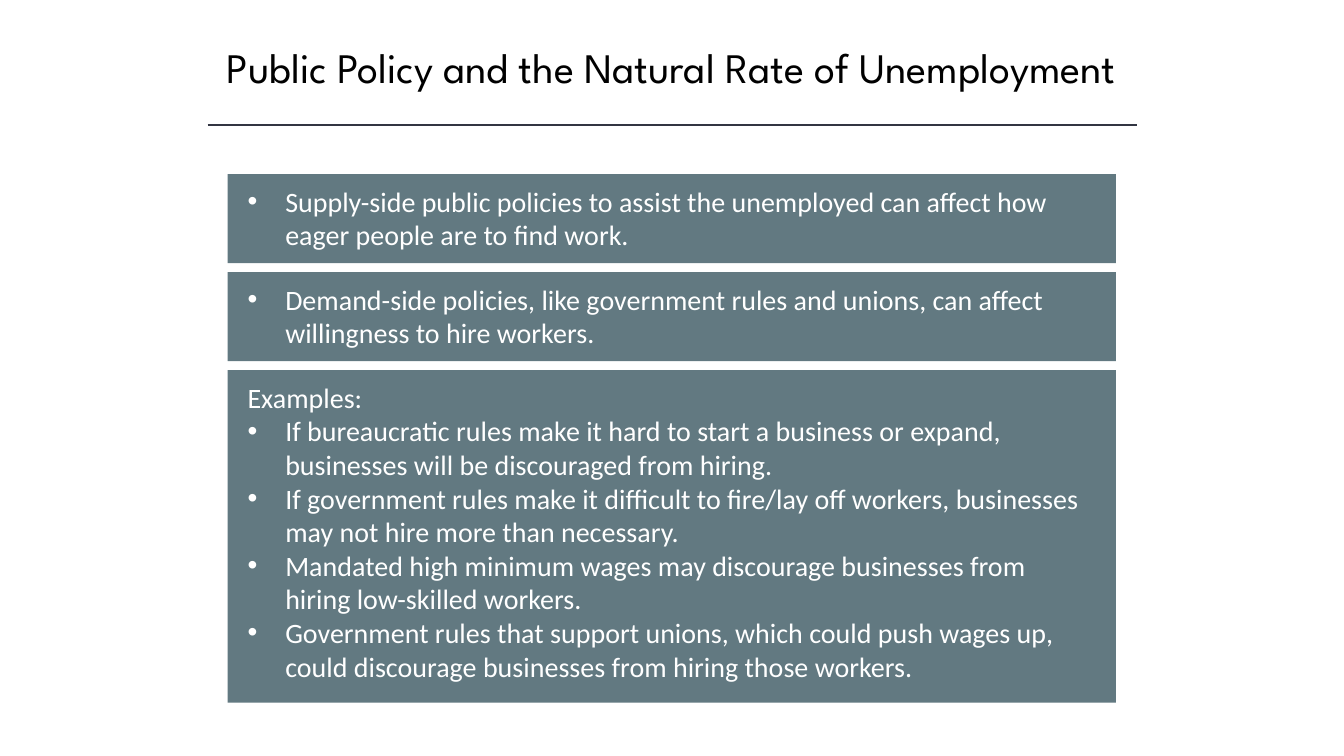
from lxml.etree import SubElement
from pptx import Presentation
from pptx.dml.color import RGBColor
from pptx.enum.shapes import MSO_CONNECTOR, MSO_SHAPE
from pptx.enum.text import MSO_ANCHOR, PP_ALIGN
from pptx.oxml.ns import qn
from pptx.util import Cm, Pt

BLACK = RGBColor(0x00, 0x00, 0x00)
WHITE = RGBColor(0xFF, 0xFF, 0xFF)
SLATE = RGBColor(0x62, 0x79, 0x81)
NAVY = RGBColor(0x32, 0x35, 0x42)

CARD_LEFT, CARD_TOP, CARD_WIDTH, CARD_GAP = 5.74, 4.39, 22.38, 0.23
CARDS = [
    (2.24, None, [
        "Supply-side public policies to assist the unemployed can affect how eager people are to find work.",
    ]),
    (2.24, None, [
        "Demand-side policies, like government rules and unions, can affect willingness to hire workers.",
    ]),
    (8.38, "Examples:", [
        "If bureaucratic rules make it hard to start a business or expand, "
        "businesses will be discouraged from hiring.",
        "If government rules make it difficult to fire/lay off workers, "
        "businesses may not hire more than necessary.",
        "Mandated high minimum wages may discourage businesses from hiring low-skilled workers.",
        "Government rules that support unions, which could push wages up, "
        "could discourage businesses from hiring those workers.",
    ]),
]


def write_paragraph(para, text, *, font, size, color, align=PP_ALIGN.LEFT, bullet=False):
    """Fill a paragraph with formatted text, optionally with a hanging bullet."""
    para.alignment = align
    if bullet:
        properties = para._p.get_or_add_pPr()
        properties.set("marL", str(Cm(0.95)))
        properties.set("indent", str(-Cm(0.95)))
        SubElement(properties, qn("a:buFont")).set("typeface", "Arial")
        SubElement(properties, qn("a:buChar")).set("char", "•")
    span = para.add_run()
    span.text = text
    span.font.name = font
    span.font.size = Pt(size)
    span.font.color.rgb = color


def add_title(page, text):
    """Add the centred slide title."""
    box = page.shapes.add_textbox(Cm(3.15), Cm(0.91), Cm(27.56), Cm(1.55))
    box.text_frame.word_wrap = True
    write_paragraph(box.text_frame.paragraphs[0], text, font="League Spartan",
                    size=30, color=BLACK, align=PP_ALIGN.CENTER)


def add_rule(page):
    """Add the thin line below the title."""
    rule = page.shapes.add_connector(MSO_CONNECTOR.STRAIGHT, Cm(5.23), Cm(3.15), Cm(28.65), Cm(3.15))
    rule.line.color.rgb = NAVY
    rule.line.width = Pt(1)
    SubElement(rule._element.spPr, qn("a:effectLst"))


def add_card(page, top, height, heading, points):
    """Add a filled card with an optional heading above its bullet points."""
    card = page.shapes.add_shape(MSO_SHAPE.RECTANGLE, Cm(CARD_LEFT), Cm(top), Cm(CARD_WIDTH), Cm(height))
    card.shadow.inherit = False
    card.fill.solid()
    card.fill.fore_color.rgb = SLATE
    card.line.fill.background()
    frame = card.text_frame
    frame.word_wrap = True
    frame.vertical_anchor = MSO_ANCHOR.TOP
    frame.margin_left, frame.margin_right = Cm(0.5), Cm(0.68)
    frame.margin_top = frame.margin_bottom = Cm(0.25)
    lines = [(heading, False)] if heading else []
    lines += [(point, True) for point in points]
    for index, (text, bullet) in enumerate(lines):
        para = frame.add_paragraph() if index else frame.paragraphs[0]
        write_paragraph(para, text, font="Calibri", size=20, color=WHITE, bullet=bullet)


def main():
    """Build and save the slide."""
    deck = Presentation()
    deck.slide_width, deck.slide_height = Cm(33.87), Cm(19.05)
    page = deck.slides.add_slide(deck.slide_layouts[6])
    add_title(page, "Public Policy and the Natural Rate of Unemployment")
    add_rule(page)
    top = CARD_TOP
    for height, heading, points in CARDS:
        add_card(page, top, height, heading, points)
        top += height + CARD_GAP
    deck.save("out.pptx")


if __name__ == "__main__":
    main()
